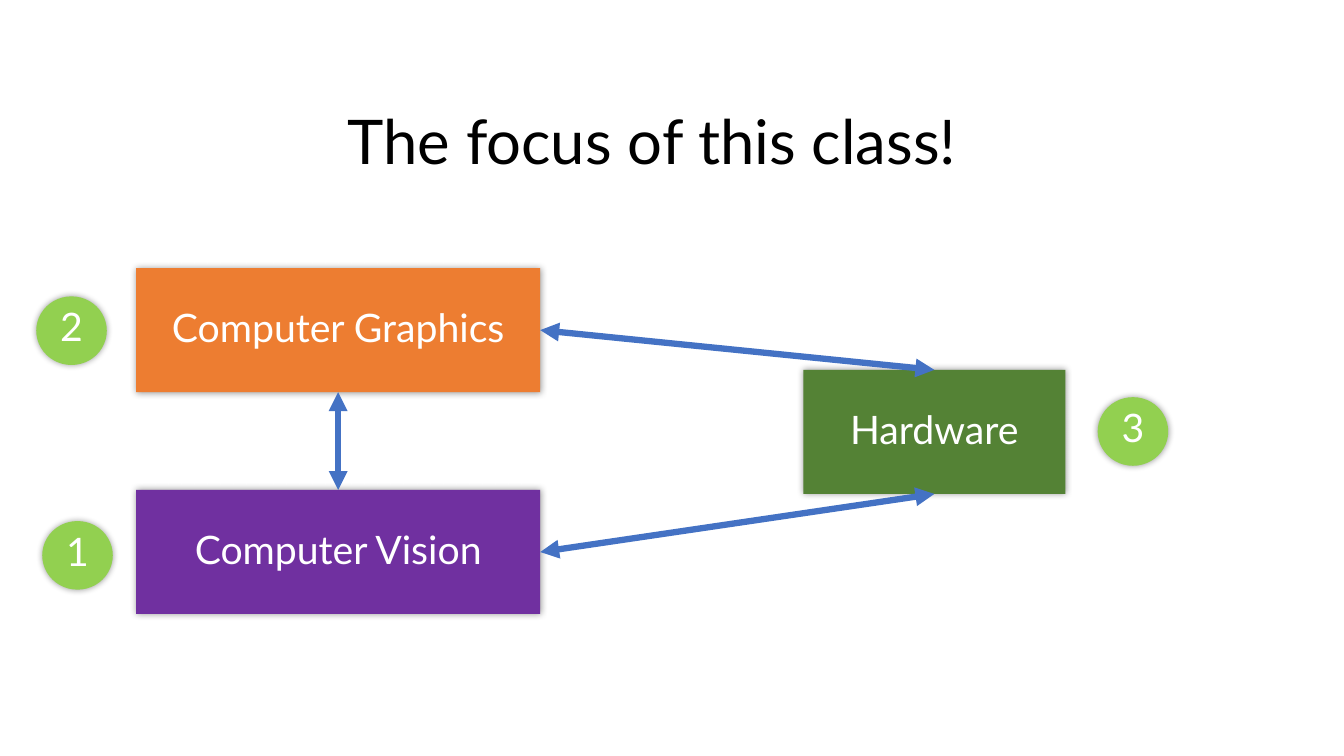
import lxml.etree
import pptx
import pptx.dml.color
import pptx.enum.shapes
import pptx.enum.text
import pptx.oxml.ns
import pptx.util

Pt = pptx.util.Pt
SHAPES = pptx.enum.shapes.MSO_SHAPE
ALIGN = pptx.enum.text.PP_ALIGN
TOP, BOTTOM, RIGHT = 0, 2, 3


def color(value):
    return pptx.dml.color.RGBColor.from_string(value)


def add_element(parent, tag, **attributes):
    return lxml.etree.SubElement(parent, pptx.oxml.ns.qn(tag), attributes)


def set_text(shape, text, size, text_color, align, line_spacing):
    frame = shape.text_frame
    frame.word_wrap = True
    frame.vertical_anchor = pptx.enum.text.MSO_ANCHOR.MIDDLE
    para = frame.paragraphs[0]
    for name, value in {"alignment": align, "line_spacing": line_spacing}.items():
        setattr(para, name, value)
    span = para.add_run()
    span.text = text
    for name, value in {"name": "Lato", "size": Pt(size)}.items():
        setattr(span.font, name, value)
    span.font.color.rgb = color(text_color)


def add_title(page, text, left, top, width, height):
    box = page.shapes.add_textbox(Pt(left), Pt(top), Pt(width), Pt(height))
    set_text(box, text, 44, "000000", ALIGN.LEFT, 0.9)


def add_glow_shadow(shape):
    """Surround the shape with a soft shadow that has no offset."""
    shape.shadow.inherit = False
    effects = shape._element.spPr.find(pptx.oxml.ns.qn("a:effectLst"))
    shadow = add_element(effects, "a:outerShdw", blurRad=str(Pt(5)), dist="0",
                         dir="0", algn="ctr", rotWithShape="0")
    shade = add_element(shadow, "a:srgbClr", val="000000")
    add_element(shade, "a:alpha", val="40000")


def add_filled_shape(page, kind, text, fill, left, top, width, height, line_spacing):
    shape = page.shapes.add_shape(kind, Pt(left), Pt(top), Pt(width), Pt(height))
    shape.fill.solid()
    shape.fill.fore_color.rgb = color(fill)
    shape.line.fill.background()
    add_glow_shadow(shape)
    set_text(shape, text, 28, "FFFFFF", ALIGN.CENTER, line_spacing)
    return shape


def add_topic(page, text, fill, left, top, width):
    return add_filled_shape(page, SHAPES.RECTANGLE, text, fill,
                            left, top, width, 88.6, 0.9)


def add_badge(page, number, left, top):
    add_filled_shape(page, SHAPES.OVAL, number, "92D050", left, top, 50.4, 49, 0.8)


def add_double_arrow(page, start, start_side, end, end_side):
    arrow = page.shapes.add_connector(
        pptx.enum.shapes.MSO_CONNECTOR.STRAIGHT, 0, 0, 0, 0)
    arrow.begin_connect(start, start_side)
    arrow.end_connect(end, end_side)
    arrow.line.color.rgb = color("4472C4")
    arrow.line.width = Pt(4.5)
    line = arrow.line._get_or_add_ln()
    for tag in ("a:headEnd", "a:tailEnd"):
        add_element(line, tag, type="triangle")
    add_element(arrow._element.spPr, "a:effectLst")


def main():
    deck = pptx.Presentation()
    deck.slide_width, deck.slide_height = Pt(960), Pt(540)
    page = deck.slides.add_slide(deck.slide_layouts[6])

    add_title(page, "The focus of this class!", 241.2, 51.1, 488.9, 104.4)
    graphics = add_topic(page, "Computer Graphics", "ED7D31", 97.2, 191.5, 288.7)
    vision = add_topic(page, "Computer Vision", "7030A0", 97.2, 350, 288.7)
    hardware = add_topic(page, "Hardware", "548235", 573.8, 264.2, 187.2)

    add_double_arrow(page, graphics, BOTTOM, vision, TOP)
    add_double_arrow(page, hardware, BOTTOM, vision, RIGHT)
    add_double_arrow(page, hardware, TOP, graphics, RIGHT)

    for number, left, top in (("1", 30.2, 372.2), ("2", 25.9, 211.7),
                              ("3", 784.1, 283.7)):
        add_badge(page, number, left, top)

    deck.save("out.pptx")


if __name__ == "__main__":
    main()
